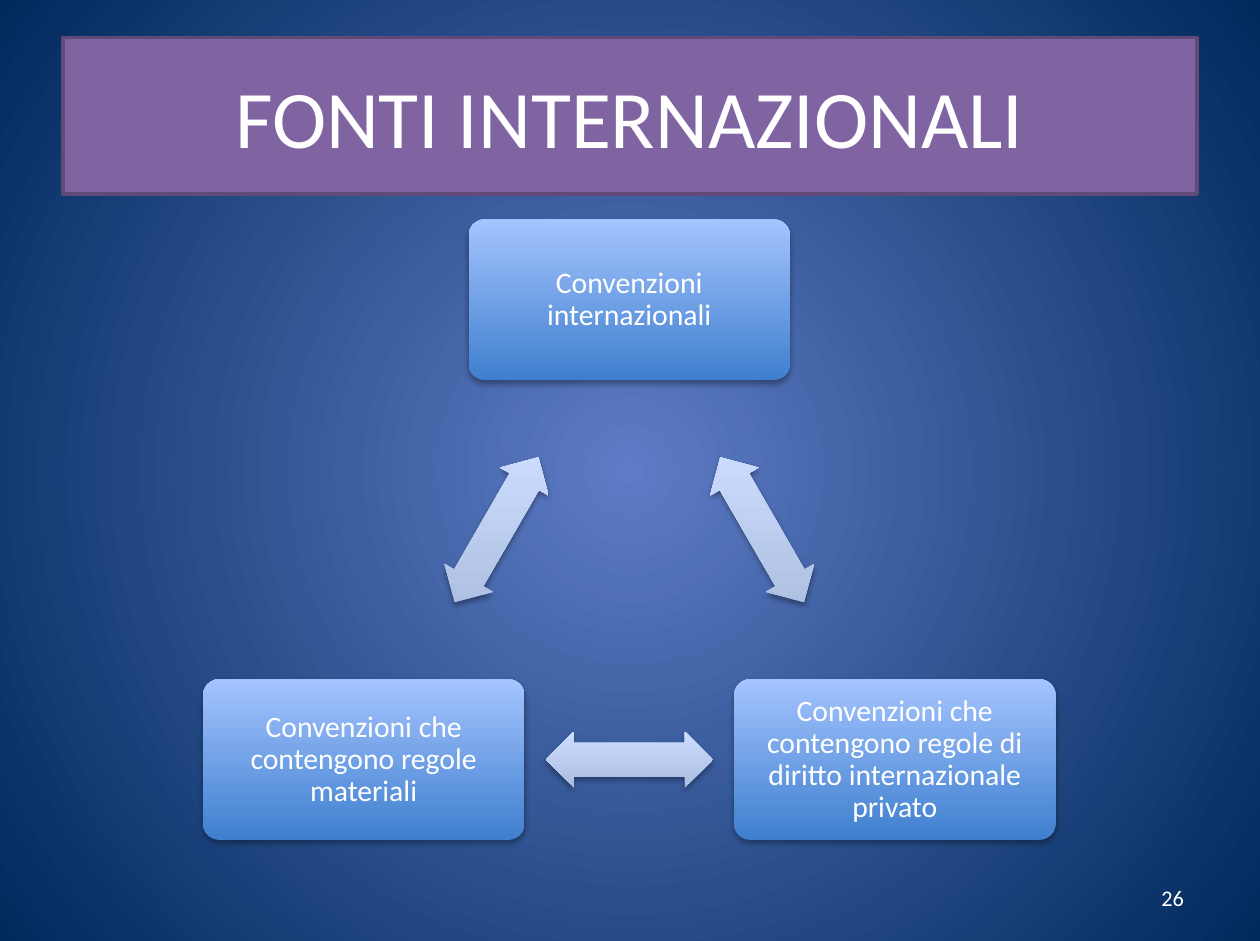
"""Build the slide on international sources as a cycle of three linked boxes."""
import math

from lxml import etree
from pptx import Presentation, util as u
from pptx.dml.color import RGBColor
from pptx.enum import shapes, text
from pptx.oxml import parse_xml
from pptx.oxml.ns import nsdecls, qn

COLORS = {
    "glow": "5E7CC5", "night": "00295C", "title": "8064A2", "title_line": "5F4A78",
    "node_low": "3F7FCE", "node_high": "A4C4FF",
    "arrow_low": "ADBFE1", "arrow_high": "CCDDFF", "text": "FFFFFF", "shadow": "000000",
}
NODES = [
    "Convenzioni internazionali",
    "Convenzioni che contengono regole di diritto internazionale privato",
    "Convenzioni che contengono regole materiali",
]
CENTER_X, CENTER_Y, RADIUS = 4.7, 4.53, 2.29


def color(name):
    return RGBColor.from_string(COLORS[name])


class SlideBuilder:
    def __init__(self, page, font="Calibri"):
        self.page = page
        self.font = font

    def paint_gradient(self, fill, first, last):
        fill.gradient()
        for stop, name, position in zip(fill.gradient_stops, (first, last), (0, 1)):
            stop.color.rgb = color(name)
            stop.position = position

    def background(self, inner, outer):
        self.paint_gradient(self.page.background.fill, inner, outer)
        gradient = self.page.element.find(".//" + qn("a:gradFill"))
        gradient.remove(gradient.find(qn("a:lin")))
        circle = etree.SubElement(gradient, qn("a:path"), {"path": "circle"})
        sides = dict.fromkeys("ltrb", "50000")
        etree.SubElement(circle, qn("a:fillToRect"), sides)

    def label(self, shape, words, size, align=text.PP_ALIGN.CENTER, spacing=1.0,
              side=0.1, edge=0.05):
        box = shape.text_frame
        formats = {
            "word_wrap": True, "vertical_anchor": text.MSO_ANCHOR.MIDDLE,
            "margin_left": u.Inches(side), "margin_right": u.Inches(side),
            "margin_top": u.Inches(edge), "margin_bottom": u.Inches(edge),
        }
        for key, value in formats.items():
            setattr(box, key, value)
        para = box.paragraphs[0]
        para.alignment, para.line_spacing = align, spacing
        span = para.add_run()
        span.text = words
        for key, value in {"name": self.font, "size": u.Pt(size)}.items():
            setattr(span.font, key, value)
        span.font.color.rgb = color("text")

    def title(self, words, left, top, width, height):
        shape = self.page.shapes.add_shape(
            shapes.MSO_SHAPE.RECTANGLE, *map(u.Inches, (left, top, width, height)))
        shape.shadow.inherit = False
        shape.fill.solid()
        shape.fill.fore_color.rgb = color("title")
        shape.line.color.rgb = color("title_line")
        shape.line.width = u.Pt(2)
        self.label(shape, words, 44)

    def page_number(self, words, left, top, width, height):
        shape = self.page.shapes.add_textbox(*map(u.Inches, (left, top, width, height)))
        self.label(shape, words, 12, text.PP_ALIGN.RIGHT)

    def raised(self, kind, x, y, width, height, tones, adjustments, rotation=0):
        shape = self.page.shapes.add_shape(
            kind, *map(u.Inches, (x - width / 2, y - height / 2, width, height)))
        for index, value in enumerate(adjustments):
            shape.adjustments[index] = value
        shape.rotation = rotation
        self.paint_gradient(shape.fill, *tones)
        shape.fill.gradient_angle = 90
        properties = shape.element.spPr
        properties.find(qn("a:gradFill")).set("rotWithShape", "0")
        shape.line.fill.background()
        properties.append(parse_xml(
            f'<a:effectLst {nsdecls("a")}><a:outerShdw blurRad="{u.Pt(3.1)}" '
            f'dist="{u.Pt(1.8)}" dir="5400000" rotWithShape="0">'
            f'<a:srgbClr val="{COLORS["shadow"]}"><a:alpha val="35000"/></a:srgbClr>'
            '</a:outerShdw></a:effectLst>'))
        return shape

    def node(self, words, x, y):
        shape = self.raised(shapes.MSO_SHAPE.ROUNDED_RECTANGLE, x, y, 2.4, 1.2,
                            ("node_low", "node_high"), [0.1])
        self.label(shape, words, 16, spacing=0.9, side=0.1, edge=0.1)

    def arrow(self, x, y, rotation):
        self.raised(shapes.MSO_SHAPE.LEFT_RIGHT_ARROW, x, y, 1.25, 0.42,
                    ("arrow_low", "arrow_high"), [0.6, 0.5], rotation)


def on_ring(degrees, radius):
    angle = math.radians(degrees)
    return CENTER_X + radius * math.sin(angle), CENTER_Y - radius * math.cos(angle)


def main():
    deck = Presentation()
    deck.slide_width, deck.slide_height = u.Inches(9.41), u.Inches(7.03)
    builder = SlideBuilder(deck.slides.add_slide(deck.slide_layouts[6]))
    builder.background("glow", "night")
    builder.title("FONTI INTERNAZIONALI", 0.47, 0.28, 8.47, 1.17)
    builder.page_number("26", 6.74, 6.52, 2.2, 0.37)
    step = 360 / len(NODES)
    for index, words in enumerate(NODES):
        middle = (index + 0.5) * step
        builder.node(words, *on_ring(index * step, RADIUS))
        builder.arrow(*on_ring(middle, RADIUS / 2), middle)
    deck.save("out.pptx")


if __name__ == "__main__":
    main()
